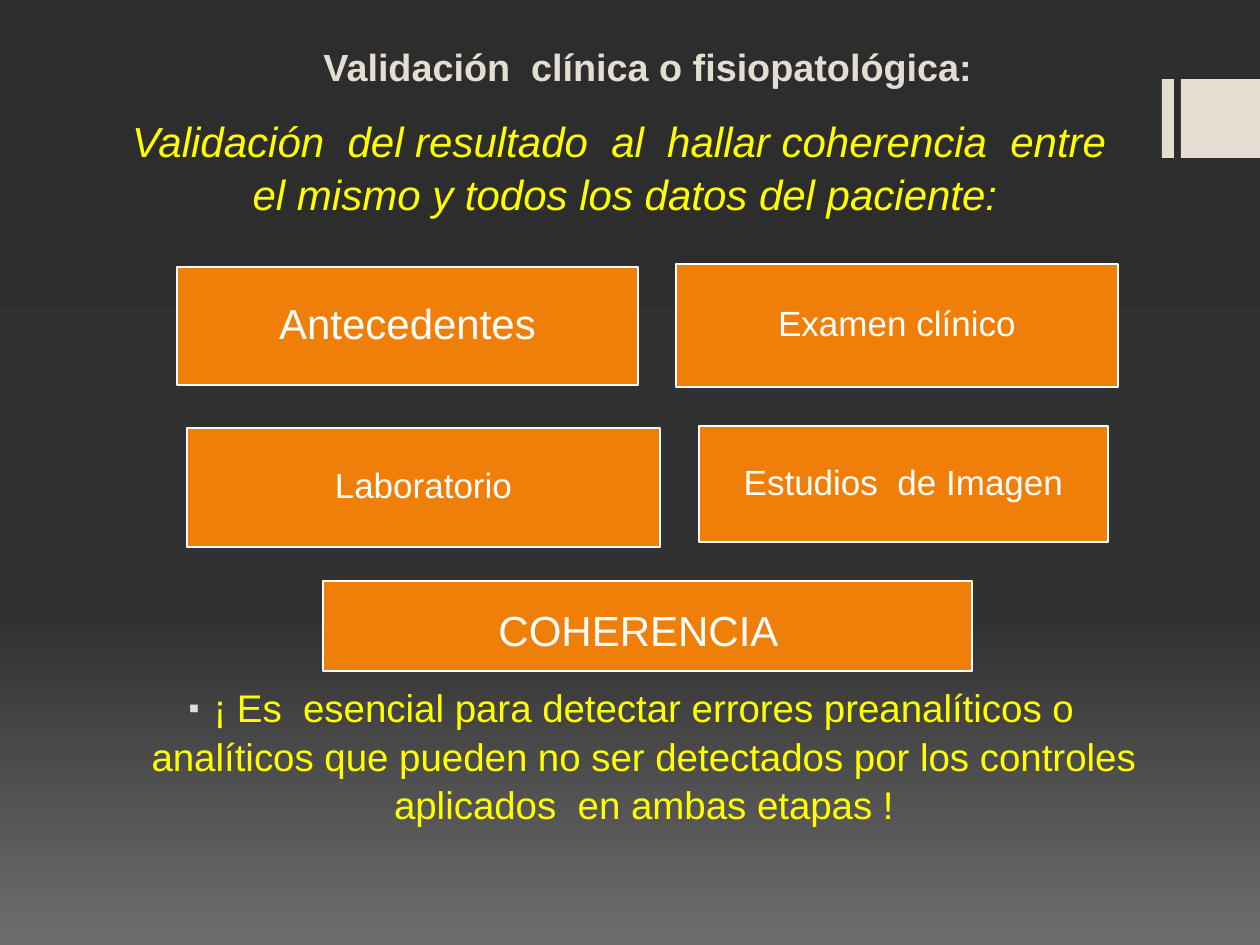
from copy import deepcopy
from lxml.etree import SubElement as Sub
from pptx import Presentation as Deck
from pptx.dml.color import RGBColor as Rgb
from pptx.enum.shapes import MSO_SHAPE as Form
from pptx.enum.text import MSO_ANCHOR as Anchor, PP_ALIGN as Align
from pptx.oxml.ns import qn
from pptx.util import Emu, Pt

SCALE = 914400 // 126
HUES = {
    "night": "2D2D2D", "dusk": "313131", "dawn": "6D6D6D",
    "sand": "E3DED1", "gold": "FFFF00", "flame": "F07F09", "white": "FFFFFF",
}


def px(num):
    return Emu(num * SCALE)


def hue(name):
    return Rgb.from_string(HUES[name])


def apply(item, form):
    for key, val in form.items():
        setattr(item, key, val)


def write(shape, text, color, font, frame=None, para=None):
    body = shape.text_frame
    apply(body, {"word_wrap": True, **(frame or {})})
    line = body.paragraphs[0]
    apply(line, {"alignment": Align.CENTER, **(para or {})})
    run = line.add_run()
    run.text = text
    apply(run.font, {"name": "Arial", **font})
    run.font.color.rgb = hue(color)
    return line


def block(slide, box, color, edge=None):
    shape = slide.shapes.add_shape(Form.RECTANGLE, *map(px, box))
    shape.shadow.inherit = False
    shape.fill.solid()
    shape.fill.fore_color.rgb = hue(color)
    if edge:
        shape.line.color.rgb = hue(edge)
        shape.line.width = Pt(1.5)
    else:
        shape.line.fill.background()
    return shape


def backdrop(slide):
    fill = slide.background.fill
    fill.gradient()
    fill.gradient_angle = 270
    stops = slide.element.find(".//" + qn("a:gsLst"))
    stops.append(deepcopy(stops[0]))
    marks = [(0, "night"), (0.65, "dusk"), (1, "dawn")]
    for stop, (place, color) in zip(fill.gradient_stops, marks):
        stop.position = place
        stop.color.rgb = hue(color)


def corner(slide, box):
    left, top, width, height = box
    block(slide, (left, top, 12, height), "sand")
    block(slide, (left + 19, top, width - 19, height), "sand")


def title(slide, box):
    shape = slide.shapes.add_textbox(*map(px, box))
    write(shape, "Validación  clínica o fisiopatológica:", "sand",
          {"size": Pt(21.6), "bold": True},
          {"vertical_anchor": Anchor.MIDDLE})


def intro(slide, box):
    shape = slide.shapes.add_textbox(*map(px, box))
    write(shape, "Validación  del resultado  al  hallar coherencia  entre  "
          "el mismo y todos los datos del paciente:", "gold",
          {"size": Pt(24), "italic": True}, para={"line_spacing": 1.05})


def cards(slide, box):
    left, top = box[:2]
    pad = {"vertical_anchor": Anchor.MIDDLE}
    low = {**pad, "margin_top": px(20), "margin_bottom": px(6),
           "margin_left": px(13), "margin_right": px(31)}
    items = [
        ("Antecedentes", (0, 3, 461, 118), 24, pad),
        ("Examen clínico", (499, 0, 442, 123), 20, pad),
        ("Laboratorio", (10, 164, 473, 119), 20, pad),
        ("Estudios  de Imagen", (522, 162, 409, 116), 20, pad),
        ("COHERENCIA", (146, 317, 649, 90), 24, low),
    ]
    for text, (dx, dy, width, height), size, frame in items:
        shape = block(slide, (left + dx, top + dy, width, height),
                      "flame", "white")
        write(shape, text, "white", {"size": Pt(size)}, frame,
              {"line_spacing": 0.9})


def note(slide, box):
    shape = slide.shapes.add_textbox(*map(px, box))
    line = write(shape, "¡ Es  esencial para detectar errores preanalíticos o "
                 "analíticos que pueden no ser detectados por los controles "
                 "aplicados  en ambas etapas !", "gold", {"size": Pt(22)},
                 para={"line_spacing": 1.05})
    props = line._p.get_or_add_pPr()
    props.set("marL", str(px(31)))
    props.set("indent", str(px(-25)))
    tint = Sub(props, qn("a:buClr"))
    Sub(tint, qn("a:srgbClr"), val=HUES["sand"])
    Sub(props, qn("a:buSzPct"), val="80000")
    Sub(props, qn("a:buFont"), typeface="Arial")
    Sub(props, qn("a:buChar"), char="▪")


def main():
    deck = Deck()
    apply(deck, {"slide_width": px(1260), "slide_height": px(945)})
    slide = deck.slides.add_slide(deck.slide_layouts[6])
    backdrop(slide)
    corner(slide, (1162, 79, 98, 79))
    title(slide, (144, 34, 1008, 65))
    intro(slide, (118, 107, 1014, 120))
    cards(slide, (177, 264, 941, 407))
    note(slide, (105, 676, 1047, 150))
    deck.save("out.pptx")


if __name__ == "__main__":
    main()
